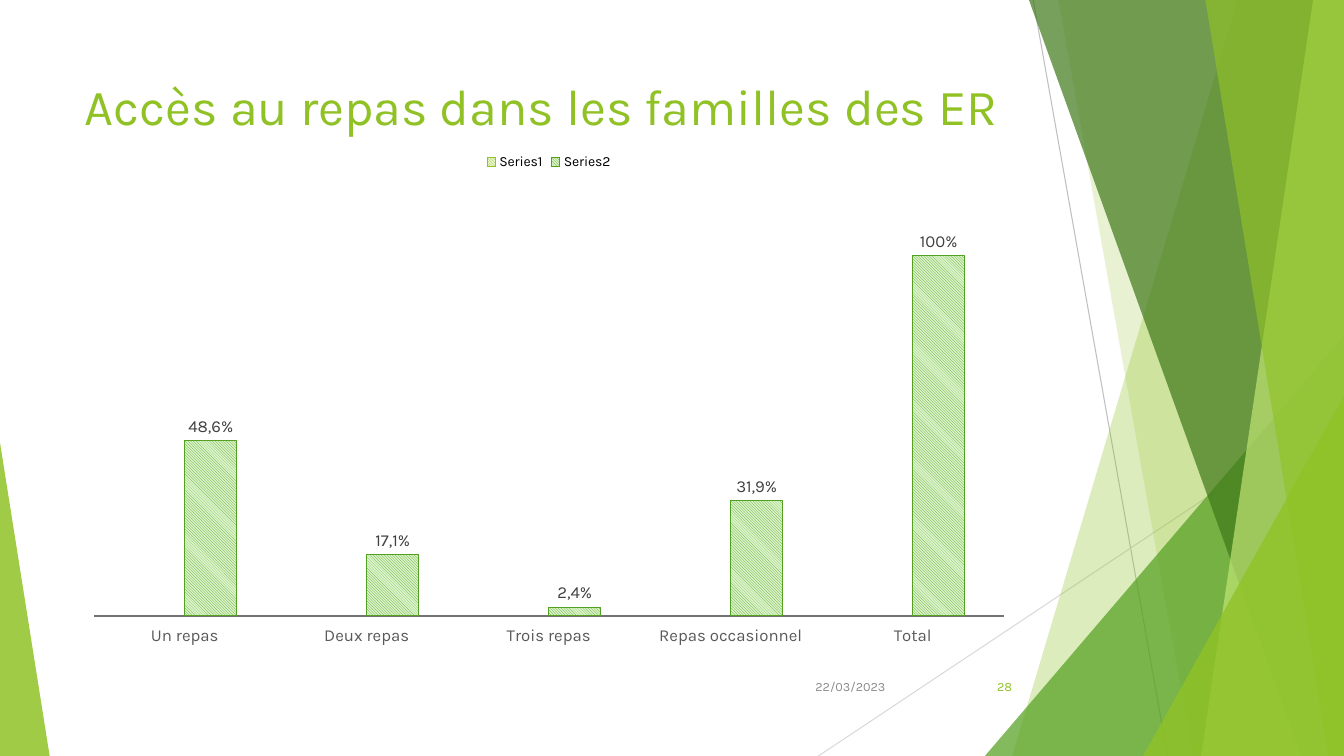
from dataclasses import dataclass

from lxml.etree import SubElement
from pptx import Presentation
from pptx.chart.data import CategoryChartData
from pptx.dml.color import RGBColor
from pptx.enum.chart import XL_CHART_TYPE, XL_LABEL_POSITION, XL_LEGEND_POSITION, XL_TICK_LABEL_POSITION, XL_TICK_MARK
from pptx.enum.dml import MSO_PATTERN
from pptx.enum.shapes import MSO_CONNECTOR, MSO_SHAPE
from pptx.enum.text import MSO_ANCHOR, PP_ALIGN
from pptx.oxml.ns import qn
from pptx.util import Pt

FONT = "Karla"
LIME = "90C226"
GREEN = "54A021"
W, H = 960, 540


@dataclass
class Ray:
    """Thin line between two points."""
    x1: float
    y1: float
    x2: float
    y2: float
    color: str


@dataclass
class Band:
    """Full-height area from a slanted left side to the right slide edge."""
    top: float
    bottom: float
    color: str
    alpha: int


@dataclass
class Wedge:
    """Right triangle standing on the bottom slide edge."""
    left: float
    top: float
    width: float
    apex: float
    color: str
    alpha: int


@dataclass
class Series:
    """Hatched column series with its label texts."""
    name: str
    values: list
    labels: list
    fore: str
    back: str


DECOR = [
    Ray(738, 0, 834, H, "BFBFBF"),
    Ray(W, 290, 584.6, H, "D9D9D9"),
    Band(884, 723, LIME, 30),
    Band(756, 852, LIME, 20),
    Wedge(703.5, 240, 256.5, 1, GREEN, 72),
    Band(735, 929.5, "3F7819", 70),
    Band(938, 858, "C0E474", 70),
    Band(861, 949, LIME, 65),
    Wedge(816.5, 283, 143.5, 1, LIME, 80),
    Wedge(0, 316, 35.5, 0, LIME, 85),
]

CATEGORIES = ["Un repas", "Deux repas", "Trois repas", "Repas occasionnel", "Total"]
SERIES = [
    Series("Series1", [None] * 5, [], LIME, "EAF6D1"),
    Series("Series2", [48.6, 17.1, 2.4, 31.9, 100],
           ["48,6%", "17,1%", "2,4%", "31,9%", "100%"], GREEN, "DBF4CA"),
]


def rgb(color: str) -> RGBColor:
    """Turn a hex string into a colour."""
    return RGBColor.from_string(color)


def style(font, size: float, color: str) -> None:
    """Set face, size and colour of a font."""
    font.name, font.size = FONT, Pt(size)
    font.color.rgb = rgb(color)


def write(tf, text: str, *, size: float, color: str, align=PP_ALIGN.LEFT) -> None:
    """Put one formatted line into a text frame."""
    tf.word_wrap = True
    tf.vertical_anchor = MSO_ANCHOR.MIDDLE
    p = tf.paragraphs[0]
    p.alignment = align
    r = p.add_run()
    r.text = text
    style(r.font, size, color)


def place(sp, left: float, top: float, width: float, height: float) -> None:
    """Position and size a shape in points."""
    sp.left, sp.top, sp.width, sp.height = Pt(left), Pt(top), Pt(width), Pt(height)


def draw_ray(s, ray: Ray) -> None:
    """Draw a thin line without shadow."""
    sp = s.shapes.add_connector(MSO_CONNECTOR.STRAIGHT, Pt(ray.x1), Pt(ray.y1), Pt(ray.x2), Pt(ray.y2))
    sp.line.color.rgb = rgb(ray.color)
    sp.line.width = Pt(0.75)
    SubElement(sp._element.spPr, qn("a:effectLst"))


def draw_area(s, area: Band | Wedge) -> None:
    """Draw a translucent band or wedge."""
    if isinstance(area, Band):
        fb = s.shapes.build_freeform(Pt(area.top), 0)
        fb.add_line_segments([(Pt(W), 0), (Pt(W), Pt(H)), (Pt(area.bottom), Pt(H))], close=True)
        sp = fb.convert_to_shape()
    else:
        sp = s.shapes.add_shape(MSO_SHAPE.ISOSCELES_TRIANGLE, Pt(area.left), Pt(area.top),
                                Pt(area.width), Pt(H - area.top))
        sp.adjustments[0] = area.apex
    sp.shadow.inherit = False
    sp.line.fill.background()
    sp.fill.solid()
    sp.fill.fore_color.rgb = rgb(area.color)
    clr = sp._element.spPr.find(qn("a:solidFill"))[0]
    SubElement(clr, qn("a:alpha"), val=str(area.alpha * 1000))


def draw_chart(s) -> None:
    """Add the column chart of meal access."""
    data = CategoryChartData()
    data.categories = CATEGORIES
    for item in SERIES:
        data.add_series(item.name, item.values)
    chart = s.shapes.add_chart(XL_CHART_TYPE.COLUMN_CLUSTERED, Pt(53.5), Pt(102),
                               Pt(677), Pt(366.5), data).chart
    style(chart.font, 10, "000000")
    chart.has_title = False
    chart.has_legend = True
    chart.legend.position = XL_LEGEND_POSITION.TOP
    chart.legend.include_in_layout = False

    axis = chart.value_axis
    axis.minimum_scale, axis.maximum_scale = 0, 120
    axis.has_major_gridlines = False
    axis.visible = False
    axis = chart.category_axis
    axis.major_tick_mark = XL_TICK_MARK.NONE
    axis.tick_label_position = XL_TICK_LABEL_POSITION.LOW
    axis.format.line.color.rgb = rgb("737373")
    axis.format.line.width = Pt(1.5)
    style(axis.tick_labels.font, 12, "595959")

    plot = chart.plots[0]
    plot.gap_width, plot.overlap = 150, 0
    plot.vary_by_categories = False
    for item, ser in zip(SERIES, plot.series):
        fill = ser.format.fill
        fill.patterned()
        fill.pattern = MSO_PATTERN.LIGHT_DOWNWARD_DIAGONAL
        fill.fore_color.rgb, fill.back_color.rgb = rgb(item.fore), rgb(item.back)
        ser.format.line.color.rgb = rgb(item.fore)
        ser.format.line.width = Pt(0.75)
        ser.data_labels.show_value = True
        style(ser.data_labels.font, 12, "404040")
        for i, text in enumerate(item.labels):
            label = ser.points[i].data_label
            write(label.text_frame, text, size=12, color="404040", align=PP_ALIGN.CENTER)
            label.position = XL_LABEL_POSITION.OUTSIDE_END


def main() -> None:
    """Build and save the slide."""
    prs = Presentation()
    prs.slide_width, prs.slide_height = Pt(W), Pt(H)
    s = prs.slides.add_slide(prs.slide_layouts[5])
    for item in DECOR:
        if isinstance(item, Ray):
            draw_ray(s, item)
        else:
            draw_area(s, item)
    place(s.shapes.title, 53.5, 48, 677, 54)
    write(s.shapes.title.text_frame, "Accès au repas dans les familles des ER", size=36, color=LIME)
    draw_chart(s)
    for text, left, width, color in [("28", 676, 54, LIME), ("22/03/2023", 567.5, 72, "8C8C8C")]:
        sp = s.shapes.add_textbox(Pt(left), Pt(476), Pt(width), Pt(29))
        write(sp.text_frame, text, size=9, color=color, align=PP_ALIGN.RIGHT)
    prs.save("out.pptx")


if __name__ == "__main__":
    main()
